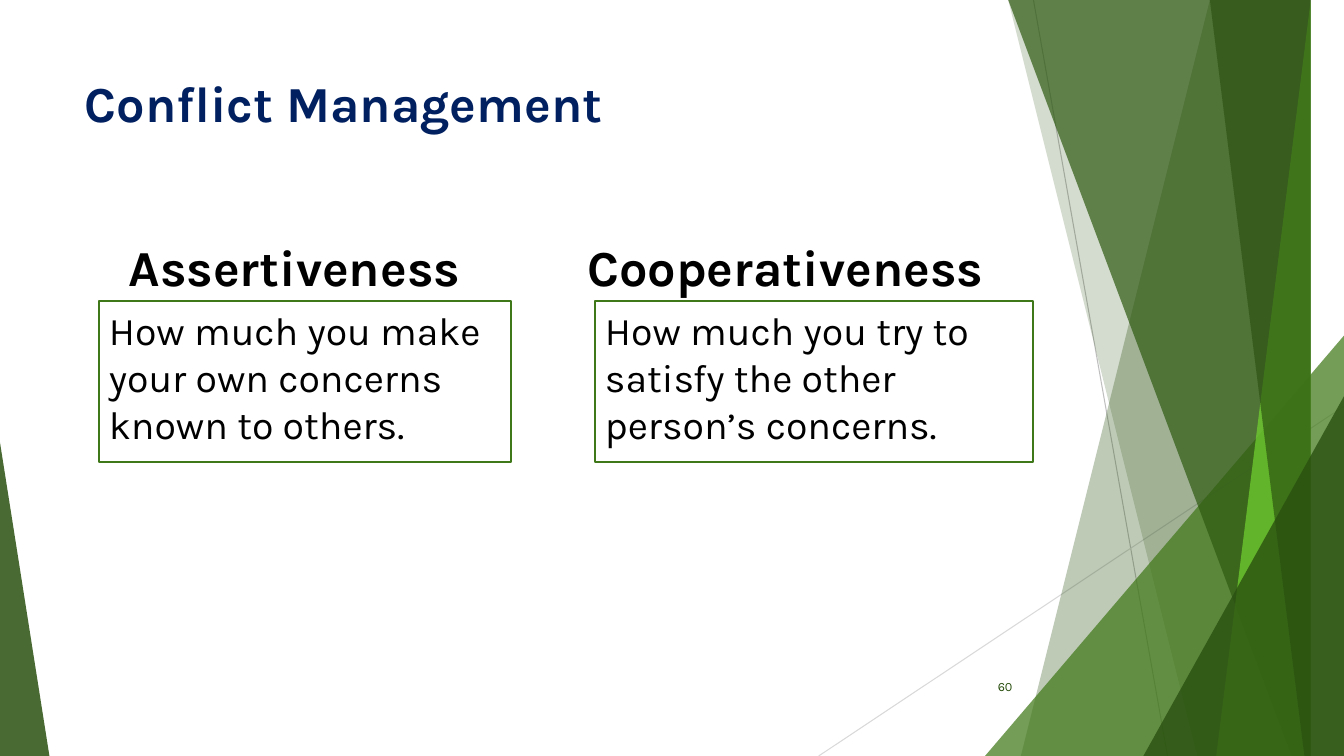
from pptx import Presentation
from pptx.util import Inches, Pt
from pptx.dml.color import RGBColor
from pptx.enum.shapes import MSO_CONNECTOR, MSO_SHAPE
from pptx.enum.text import MSO_ANCHOR, MSO_AUTO_SIZE, PP_ALIGN
from pptx.oxml.ns import qn
from lxml.etree import SubElement

COLORS = {
    "white": "FFFFFF", "black": "000000", "navy": "002060",
    "gray": "BFBFBF", "pale": "D9D9D9", "green": "3F7818",
    "dark": "2A5010", "deep": "2F5A12", "lime": "73D630",
}


def paint(shape, color, alpha):
    shape.shadow.inherit = False
    shape.fill.solid()
    shape.fill.fore_color.rgb = RGBColor.from_string(COLORS[color])
    shape.line.fill.background()
    clr = shape.fill._xPr.find(qn("a:solidFill"))[0]
    SubElement(clr, qn("a:alpha"), val=str(alpha * 1000))


def write(shape, box, text, size, color="black", bold=False,
          align=PP_ALIGN.LEFT, anchor=MSO_ANCHOR.TOP):
    shape.left, shape.top, shape.width, shape.height = map(Inches, box)
    frame = shape.text_frame
    frame.word_wrap = True
    frame.auto_size = MSO_AUTO_SIZE.NONE
    frame.vertical_anchor = anchor
    para = frame.paragraphs[0]
    props = para._p.get_or_add_pPr()
    props.set("marL", "0")
    props.set("indent", "0")
    SubElement(props, qn("a:buNone"))
    para.alignment = align
    para.space_before = Pt(0)
    run = para.add_run()
    run.text = text
    run.font.name = "Karla"
    run.font.size = Pt(size)
    run.font.bold = bold
    run.font.color.rgb = RGBColor.from_string(COLORS[color])


prs = Presentation()
prs.slide_width, prs.slide_height = Inches(13.33), Inches(7.5)
slide = prs.slides.add_slide(prs.slide_layouts[4])
shapes = slide.shapes
holders = list(slide.placeholders)

# Thin lines behind the bands
for x1, y1, x2, y2, color in [
    (10.25, 0, 11.58, 7.5, "gray"),
    (13.33, 4.03, 8.12, 7.5, "pale"),
]:
    line = shapes.add_connector(MSO_CONNECTOR.STRAIGHT, Inches(x1), Inches(y1),
                                Inches(x2), Inches(y2))
    line.line.width = Pt(0.75)
    line.line.color.rgb = RGBColor.from_string(COLORS[color])
    SubElement(line._element.spPr, qn("a:effectLst"))

# Green bands: (top x, bottom x) run to the right edge; (box, adj) is a triangle
for kind, first, last, color, alpha in [
    ("band", 12.27, 10.04, "dark", 30),
    ("band", 10.5, 11.82, "dark", 20),
    ("wedge", (9.77, 3.33, 3.56, 4.17), 1, "green", 72),
    ("band", 10.21, 12.91, "deep", 70),
    ("band", 13.03, 11.92, "lime", 70),
    ("band", 11.96, 13.17, "dark", 65),
    ("wedge", (11.34, 3.93, 1.99, 3.57), 1, "dark", 80),
    ("wedge", (0, 4.39, 0.49, 3.11), 0, "dark", 85),
]:
    if kind == "band":
        path = shapes.build_freeform(first, -0.01, scale=Inches(1))
        path.add_line_segments([(13.33, -0.01), (13.33, 7.5), (last, 7.5)])
        part = path.convert_to_shape()
    else:
        part = shapes.add_shape(MSO_SHAPE.ISOSCELES_TRIANGLE, *map(Inches, first))
        part.adjustments[0] = last
    paint(part, color, alpha)

# Bring the placeholders in front of the bands
for holder in holders:
    if holder.placeholder_format.idx < 5:
        shapes._spTree.append(holder._element)
    else:
        shapes._spTree.remove(holder._element)

# Title
write(shapes.title, (0.74, 0.67, 9.4, 1.44), "Conflict Management", 36, "navy", True)

# Two columns: heading over a framed text
for idx, left, head, box, text in [
    (1, 0.74, "Assertiveness", (0.98, 2.99, 4.09, 1.59),
     "How much you make your own concerns known to others."),
    (3, 5.5, "Cooperativeness", (5.9, 2.99, 4.35, 1.59),
     "How much you try to satisfy the other person’s concerns."),
]:
    write(slide.placeholders[idx], (left, 2.36, 4.58, 0.63), head, 36, bold=True,
          align=PP_ALIGN.CENTER, anchor=MSO_ANCHOR.BOTTOM)
    body = slide.placeholders[idx + 1]
    write(body, box, text, 28)
    body.fill.solid()
    body.fill.fore_color.rgb = RGBColor.from_string(COLORS["white"])
    body.line.width = Pt(1.5)
    body.line.color.rgb = RGBColor.from_string(COLORS["green"])

# The first heading sits a little left of centre
slide.placeholders[1].text_frame.margin_right = Inches(0.32)

# Slide number
number = shapes.add_textbox(0, 0, 0, 0)
write(number, (9.39, 6.61, 0.75, 0.4), "60", 9, "dark",
      align=PP_ALIGN.RIGHT, anchor=MSO_ANCHOR.MIDDLE)

prs.save("out.pptx")
